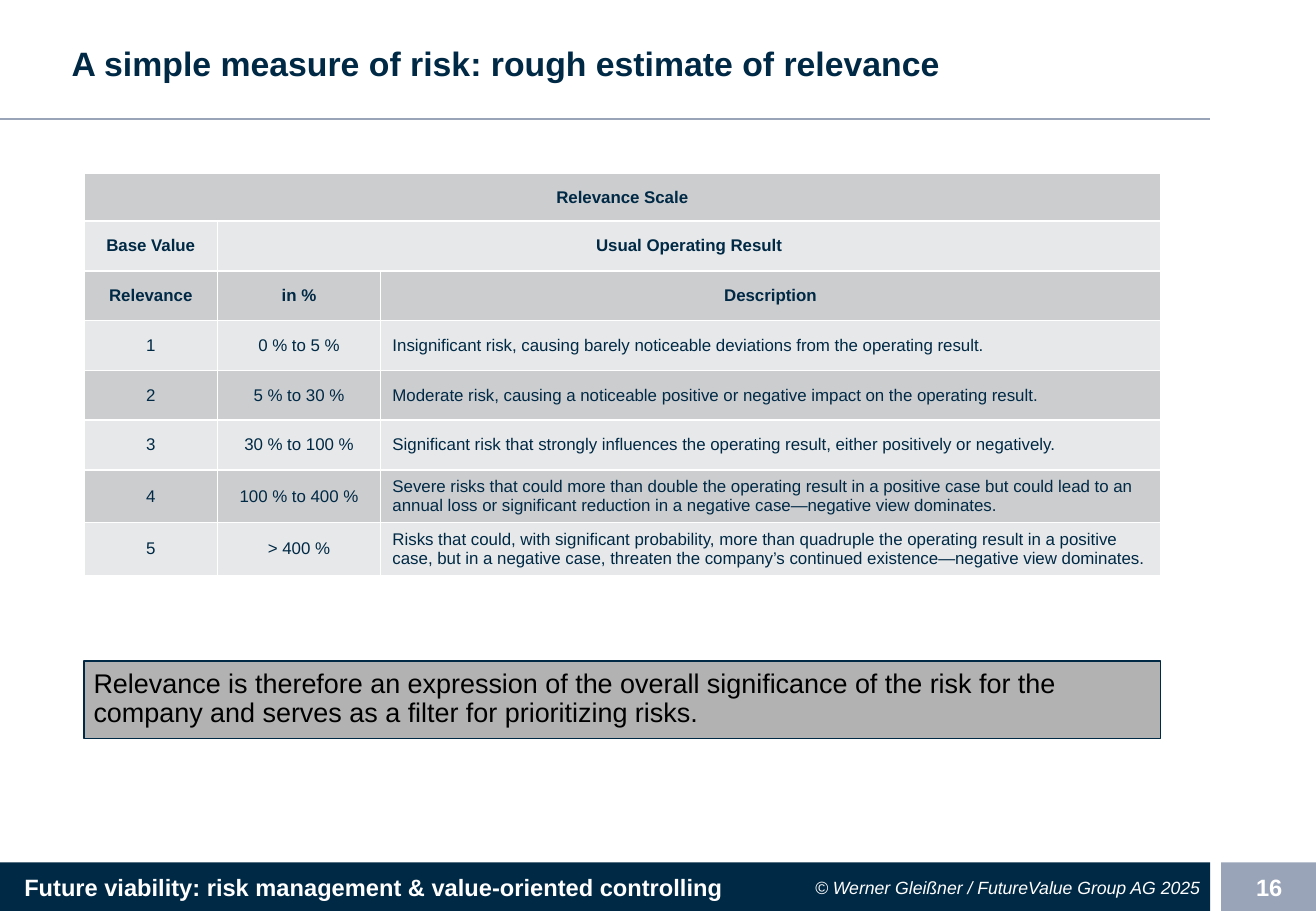
from lxml import etree
from pptx import Presentation
from pptx import util as u
from pptx.dml.color import RGBColor
from pptx.enum import shapes, text
from pptx.oxml.ns import qn

NAVY = RGBColor(0x00, 0x29, 0x45)
STEEL = RGBColor(0x99, 0xA4, 0xB9)
GREY = RGBColor(0xB2, 0xB2, 0xB2)
DARK = RGBColor(0xCC, 0xCD, 0xCF)
LIGHT = RGBColor(0xE7, 0xE8, 0xE9)
WHITE = RGBColor(0xFF, 0xFF, 0xFF)
BLACK = RGBColor(0x00, 0x00, 0x00)

LEFT, CENTER, RIGHT = text.PP_ALIGN.LEFT, text.PP_ALIGN.CENTER, text.PP_ALIGN.RIGHT

TITLE = "A simple measure of risk: rough estimate of relevance"
NOTE = ("Relevance is therefore an expression of the overall significance of the risk "
        "for the company and serves as a filter for prioritizing risks.")
COURSE = "Future viability: risk management & value-oriented controlling"
RIGHTS = "© Werner Gleißner / FutureValue Group AG 2025"
PAGE = "16"

HEADS = 3
ROWS = [
    ("Relevance Scale",),
    ("Base Value", "Usual Operating Result"),
    ("Relevance", "in %", "Description"),
    ("1", "0 % to 5 %",
     "Insignificant risk, causing barely noticeable deviations from the operating result."),
    ("2", "5 % to 30 %",
     "Moderate risk, causing a noticeable positive or negative impact on the operating result."),
    ("3", "30 % to 100 %",
     "Significant risk that strongly influences the operating result, either positively or "
     "negatively."),
    ("4", "100 % to 400 %",
     "Severe risks that could more than double the operating result in a positive case but "
     "could lead to an annual loss or significant reduction in a negative case—negative view "
     "dominates."),
    ("5", "> 400 %",
     "Risks that could, with significant probability, more than quadruple the operating result "
     "in a positive case, but in a negative case, threaten the company’s continued "
     "existence—negative view dominates."),
]
WIDTHS = (1.1, 1.34, 6.42)
TOP_ROW, ROW = 0.39, 0.41

EDGE, WIDE = 0.69, sum(WIDTHS)
BAR_TOP, BAR_HIGH, BAR_WIDE = 7.1, 0.41, 9.96


def write(frame, words, size, color, align=LEFT, bold=False, italic=False):
    frame.vertical_anchor = text.MSO_ANCHOR.MIDDLE
    para = frame.paragraphs[0]
    para.alignment = align
    run = para.add_run()
    run.text = words
    font = run.font
    font.name, font.size, font.bold, font.italic = "Arial", u.Pt(size), bold, italic
    font.color.rgb = color
    return para


def inset(frame, left=0.08, top=0.04):
    frame.margin_left, frame.margin_right = u.Inches(left), u.Inches(0.08)
    frame.margin_top = frame.margin_bottom = u.Inches(top)
    frame.word_wrap = True


def add_box(slide, place, fill, line=None):
    box = slide.shapes.add_shape(shapes.MSO_SHAPE.RECTANGLE, *map(u.Inches, place))
    box.shadow.inherit = False
    box.fill.solid()
    box.fill.fore_color.rgb = fill
    if line is None:
        box.line.fill.background()
    else:
        box.line.color.rgb = line
        box.line.width = u.Pt(1)
    return box.text_frame


def add_edges(cell):
    """Draw a white border of one point on all four sides; call before filling."""
    props = cell._tc.get_or_add_tcPr()
    for side in ("a:lnL", "a:lnR", "a:lnT", "a:lnB"):
        line = etree.SubElement(props, qn(side), w=str(u.Pt(1)))
        fill = etree.SubElement(line, qn("a:solidFill"))
        etree.SubElement(fill, qn("a:srgbClr"), val=str(WHITE))


def add_scale(slide):
    high = TOP_ROW + ROW * (len(ROWS) - 1)
    grid = slide.shapes.add_table(len(ROWS), len(WIDTHS), *map(
        u.Inches, (EDGE, 1.43, WIDE, high))).table
    for col, width in zip(grid.columns, WIDTHS):
        col.width = u.Inches(width)
    last = len(WIDTHS) - 1
    for r, words in enumerate(ROWS):
        grid.rows[r].height = u.Inches(ROW if r else TOP_ROW)
        for c in range(len(WIDTHS)):
            cell = grid.cell(r, c)
            add_edges(cell)
            cell.fill.solid()
            cell.fill.fore_color.rgb = LIGHT if r % 2 else DARK
        if len(words) <= last:
            grid.cell(r, len(words) - 1).merge(grid.cell(r, last))
        head = r < HEADS
        for c, item in enumerate(words):
            cell = grid.cell(r, c)
            cell.vertical_anchor = text.MSO_ANCHOR.MIDDLE
            align = CENTER if head or c < last else LEFT
            write(cell.text_frame, item, 10, NAVY, align, bold=head)


def add_footer(slide):
    bar = add_box(slide, (0, BAR_TOP, BAR_WIDE, BAR_HIGH), NAVY)
    inset(bar, left=0.2)
    bar.word_wrap = False
    write(bar, COURSE, 14, WHITE, bold=True)
    page = add_box(slide, (10.05, BAR_TOP, 0.79, BAR_HIGH), STEEL)
    inset(page)
    write(page, PAGE, 14, WHITE, CENTER, bold=True)
    rights = slide.shapes.add_textbox(*map(
        u.Inches, (5.63, BAR_TOP, 4.33, BAR_HIGH))).text_frame
    inset(rights)
    write(rights, RIGHTS, 10.5, WHITE, RIGHT, italic=True)


def add_rule(slide):
    rule = slide.shapes.add_connector(shapes.MSO_CONNECTOR.STRAIGHT, *map(
        u.Inches, (0, 0.98, BAR_WIDE, 0.98)))
    rule.line.color.rgb = STEEL
    rule.line.width = u.Pt(1.5)
    etree.SubElement(rule._element.spPr, qn("a:effectLst"))


def main():
    deck = Presentation()
    deck.slide_width, deck.slide_height = u.Inches(10.83), u.Inches(7.5)
    slide = deck.slides.add_slide(deck.slide_layouts[5])

    add_footer(slide)
    add_rule(slide)

    title = slide.shapes.title
    title.left, title.top, title.width, title.height = map(
        u.Inches, (0.51, 0.16, 9.45, 0.71))
    inset(title.text_frame)
    write(title.text_frame, TITLE, 20, NAVY, bold=True)

    note = add_box(slide, (EDGE, 5.44, WIDE, 0.64), GREY, NAVY)
    inset(note, top=0.08)
    write(note, NOTE, 16, BLACK).line_spacing = 0.9

    add_scale(slide)
    deck.save("out.pptx")


if __name__ == "__main__":
    main()
